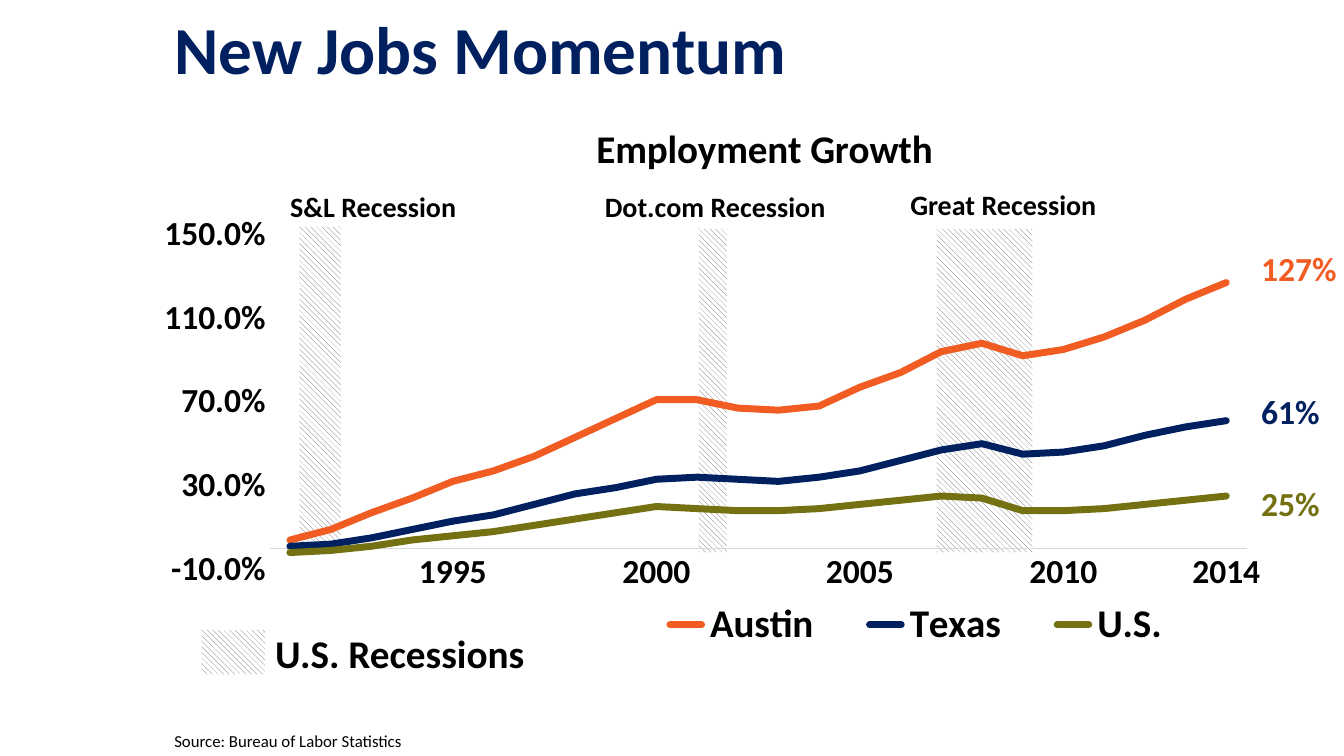
from dataclasses import dataclass

from lxml import etree
from pptx import Presentation
from pptx.chart.data import CategoryChartData
from pptx.dml.color import RGBColor
from pptx.enum.chart import XL_CHART_TYPE, XL_LEGEND_POSITION, XL_TICK_MARK
from pptx.enum.dml import MSO_PATTERN
from pptx.enum.shapes import MSO_SHAPE
from pptx.enum.text import MSO_ANCHOR, PP_ALIGN
from pptx.oxml import parse_xml
from pptx.oxml.ns import nsdecls, qn
from pptx.util import Inches, Pt

LINE_CHART = XL_CHART_TYPE.LINE
LEGEND_BOTTOM = XL_LEGEND_POSITION.BOTTOM
NO_TICK = XL_TICK_MARK.NONE
DIAGONAL = MSO_PATTERN.WIDE_DOWNWARD_DIAGONAL
RECTANGLE = MSO_SHAPE.RECTANGLE
TOP, MIDDLE = MSO_ANCHOR.TOP, MSO_ANCHOR.MIDDLE
LEFT = PP_ALIGN.LEFT


@dataclass(frozen=True)
class Theme:
    font: str = "Calibri"
    black: str = "000000"
    white: str = "FFFFFF"
    navy: str = "002060"
    orange: str = "F15C22"
    olive: str = "737112"
    hatch: str = "666262"
    axis: str = "D9D9D9"
    title: int = 48
    heading: int = 28
    label: int = 24
    note: int = 20
    source: int = 12
    chart: int = 10
    series_width: int = 5


THEME = Theme()

# Growth since 1991, one value a year
GROWTH = {
    "Austin": (THEME.orange, [
        0.04, 0.09, 0.17, 0.24, 0.32, 0.37, 0.44, 0.53, 0.62, 0.71, 0.71, 0.67,
        0.66, 0.68, 0.77, 0.84, 0.94, 0.98, 0.92, 0.95, 1.01, 1.09, 1.19, 1.27]),
    "Texas": (THEME.navy, [
        0.01, 0.02, 0.05, 0.09, 0.13, 0.16, 0.21, 0.26, 0.29, 0.33, 0.34, 0.33,
        0.32, 0.34, 0.37, 0.42, 0.47, 0.5, 0.45, 0.46, 0.49, 0.54, 0.58, 0.61]),
    "U.S.": (THEME.olive, [
        -0.02, -0.01, 0.01, 0.04, 0.06, 0.08, 0.11, 0.14, 0.17, 0.2, 0.19, 0.18,
        0.18, 0.19, 0.21, 0.23, 0.25, 0.24, 0.18, 0.18, 0.19, 0.21, 0.23, 0.25]),
}
YEARS = [str(year) if year % 5 == 0 or year == 2014 else ""
         for year in range(1991, 2015)]


class SlideBuilder:
    def __init__(self, slide, theme):
        self.slide = slide
        self.theme = theme

    def style_font(self, font, size, color, bold=True):
        font.name = self.theme.font
        font.size = Pt(size)
        font.bold = bold
        font.color.rgb = RGBColor.from_string(color)

    def fill_frame(self, frame, text, size, color, bold=True, anchor=TOP):
        frame.word_wrap = True
        frame.vertical_anchor = anchor
        paragraph = frame.paragraphs[0]
        paragraph.alignment = LEFT
        run = paragraph.add_run()
        run.text = text
        self.style_font(run.font, size, color, bold)
        return paragraph

    def title(self, text, box):
        shape = self.slide.shapes.title
        shape.left, shape.top, shape.width, shape.height = map(Inches, box)
        paragraph = self.fill_frame(shape.text_frame, text, self.theme.title,
                                    self.theme.navy, anchor=MIDDLE)
        paragraph.line_spacing = 0.9

    def text(self, text, box, size, color, bold=True, anchor=TOP, parent=None):
        shapes = (parent or self.slide).shapes
        frame = shapes.add_textbox(*map(Inches, box)).text_frame
        self.fill_frame(frame, text, size, color, bold, anchor)
        return frame

    def hatched_band(self, box, parent=None):
        shapes = (parent or self.slide).shapes
        band = shapes.add_shape(RECTANGLE, *map(Inches, box))
        band.shadow.inherit = False
        band.fill.patterned()
        band.fill.pattern = DIAGONAL
        band.fill.fore_color.rgb = RGBColor.from_string(self.theme.hatch)
        band.fill.back_color.rgb = RGBColor.from_string(self.theme.white)
        band.line.fill.background()

    def place(self, element, index, inner=False, **fractions):
        """Give a chart part a manual layout in fractions of the chart."""
        for old in element.findall(qn("c:layout")):
            element.remove(old)
        layout = parse_xml(f"<c:layout {nsdecls('c')}><c:manualLayout/></c:layout>")
        if inner:
            etree.SubElement(layout[0], qn("c:layoutTarget")).set("val", "inner")
        for mode in ("xMode", "yMode"):
            etree.SubElement(layout[0], qn(f"c:{mode}")).set("val", "edge")
        for name, value in fractions.items():
            etree.SubElement(layout[0], qn(f"c:{name}")).set("val", str(value))
        element.insert(index, layout)

    def line_chart(self, heading, categories, growth, box):
        theme = self.theme
        data = CategoryChartData(number_format="0.0%")
        data.categories = categories
        for name, (_, values) in growth.items():
            data.add_series(name, values)
        chart = self.slide.shapes.add_chart(
            LINE_CHART, *map(Inches, box), data).chart
        self.style_font(chart.font, theme.chart, theme.black, False)

        # Heading and legend
        chart.has_title = True
        run = chart.chart_title.text_frame.paragraphs[0].add_run()
        run.text = heading
        self.style_font(run.font, theme.heading, theme.black)
        chart.has_legend = True
        legend = chart.legend
        legend.position = LEGEND_BOTTOM
        legend.include_in_layout = False
        self.style_font(legend.font, theme.heading, theme.black)

        # Axes
        for axis in (chart.category_axis, chart.value_axis):
            axis.major_tick_mark = axis.minor_tick_mark = NO_TICK
            axis.has_major_gridlines = False
            self.style_font(axis.tick_labels.font, theme.label, theme.black)
        category_axis, value_axis = chart.category_axis, chart.value_axis
        category_axis.format.line.color.rgb = RGBColor.from_string(theme.axis)
        category_axis.format.line.width = Pt(0.75)
        body = category_axis._element.find(f"{qn('c:txPr')}/{qn('a:bodyPr')}")
        body.set("rot", "-60000000")
        skip = parse_xml(f'<c:tickLblSkip {nsdecls("c")} val="1"/>')
        category_axis._element.find(qn("c:noMultiLvlLbl")).addprevious(skip)
        value_axis.format.line.fill.background()
        value_axis.minimum_scale, value_axis.maximum_scale = -0.1, 1.5
        value_axis.major_unit = 0.4
        value_axis.tick_labels.number_format = "0.0%"
        value_axis.tick_labels.number_format_is_linked = False

        # Series lines
        for series, (color, _) in zip(chart.plots[0].series, growth.values()):
            series.smooth = False
            series.format.line.color.rgb = RGBColor.from_string(color)
            series.format.line.width = Pt(theme.series_width)
            series.format.line._get_or_add_ln().set("cap", "rnd")

        # Layout, with a clear background so the bands show through
        plot_area = chart._chartSpace.chart.plotArea
        self.place(plot_area, 0, inner=True, x=0.093, y=0.223, w=0.895, h=0.581)
        self.place(chart.chart_title._element, 1, x=0.386, y=0.016)
        self.place(legend._element, 1, x=0.42, y=0.84, w=0.53, h=0.12)
        clear = f"<c:spPr {nsdecls('c', 'a')}><a:noFill/><a:ln><a:noFill/></a:ln></c:spPr>"
        plot_area.append(parse_xml(clear))
        chart._chartSpace.chart.addnext(parse_xml(clear))


def main():
    presentation = Presentation()
    presentation.slide_width = Inches(13.33)
    presentation.slide_height = Inches(7.5)
    title_only = presentation.slide_layouts[5]
    builder = SlideBuilder(presentation.slides.add_slide(title_only), THEME)
    builder.title("New Jobs Momentum", (1.63, 0, 11.7, 1.05))

    # Recession bands behind the chart
    for band in ((9.29, 2.27, 0.95, 3.21), (6.93, 2.27, 0.28, 3.21),
                 (2.97, 2.25, 0.41, 3.23)):
        builder.hatched_band(band)
    builder.line_chart("Employment Growth", YEARS, GROWTH, (1.63, 1.05, 10.87, 5.72))

    # Recession names
    for name, left, top, width in (("S&L Recession", 2.78, 1.83, 2.13),
                                   ("Dot.com Recession", 5.9, 1.83, 2.62),
                                   ("Great Recession", 8.93, 1.81, 2.13)):
        builder.text(name, (left, top, width, 0.44), THEME.note, THEME.black)

    # Recession key
    key = builder.slide.shapes.add_group_shape()
    builder.hatched_band((2, 6.25, 0.63, 0.44), key)
    builder.text("U.S. Recessions", (2.63, 6.36, 2.89, 0.23), THEME.heading,
                 THEME.black, anchor=MIDDLE, parent=key)

    # Final growth beside each line
    for (color, values), top in zip(GROWTH.values(), (2.41, 3.83, 4.74)):
        frame = builder.text(f"{values[-1]:.0%}", (12.41, top, 0.92, 0.48),
                             THEME.label, color)
        frame.margin_right = 0

    builder.text("Source: Bureau of Labor Statistics", (1.63, 7.2, 4.75, 0.3),
                 THEME.source, THEME.black, bold=False)
    presentation.save("out.pptx")


if __name__ == "__main__":
    main()
